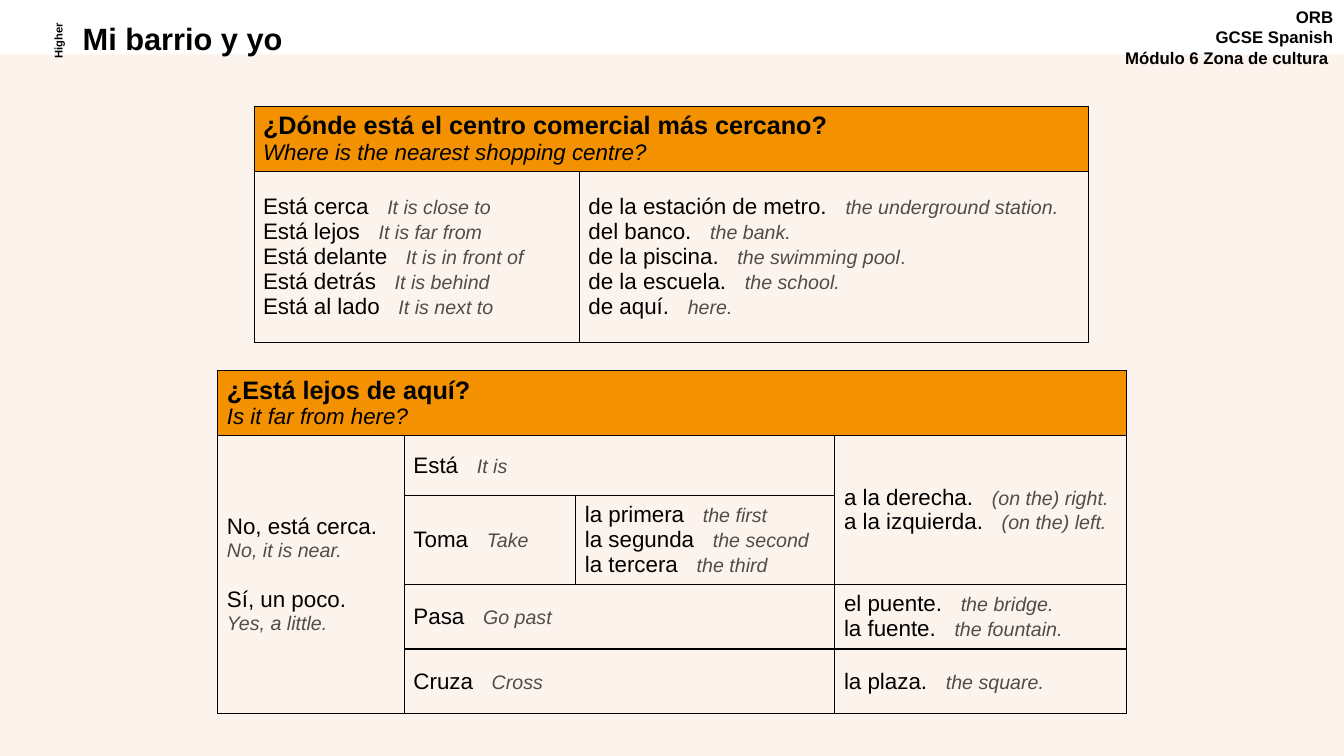
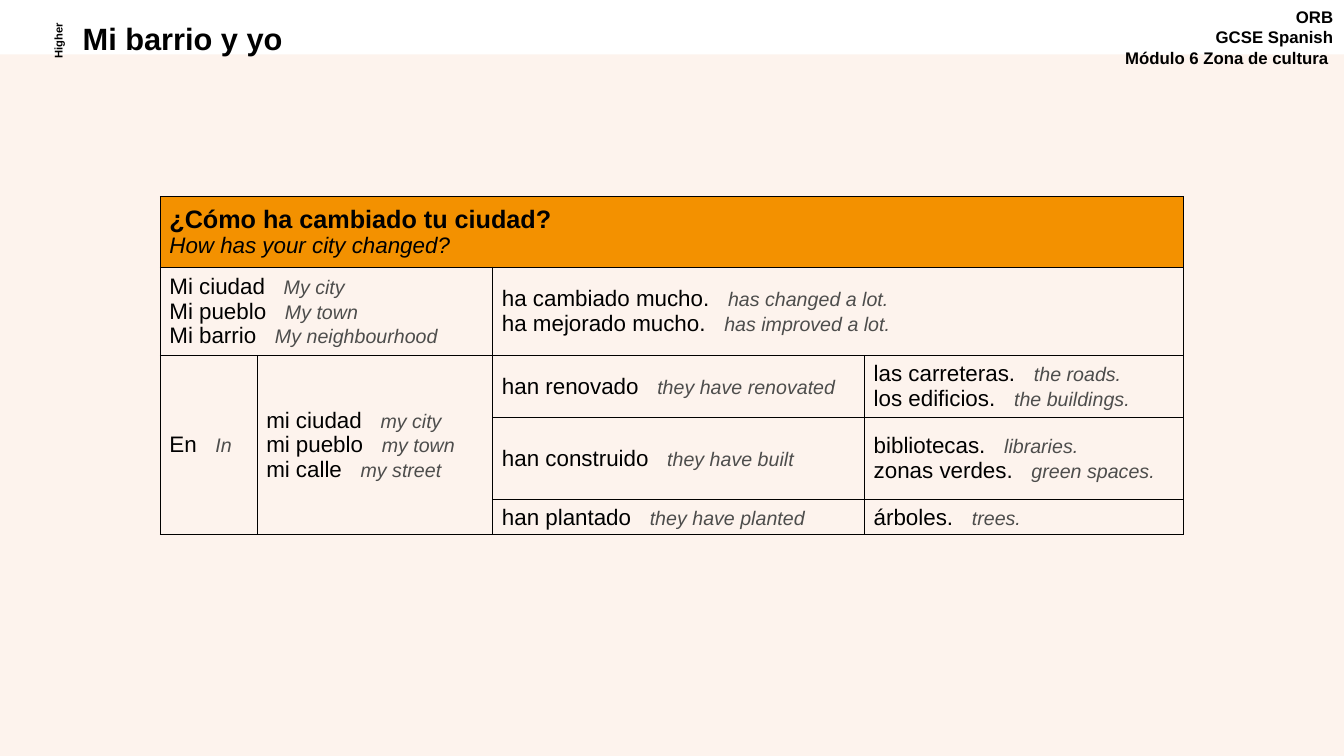
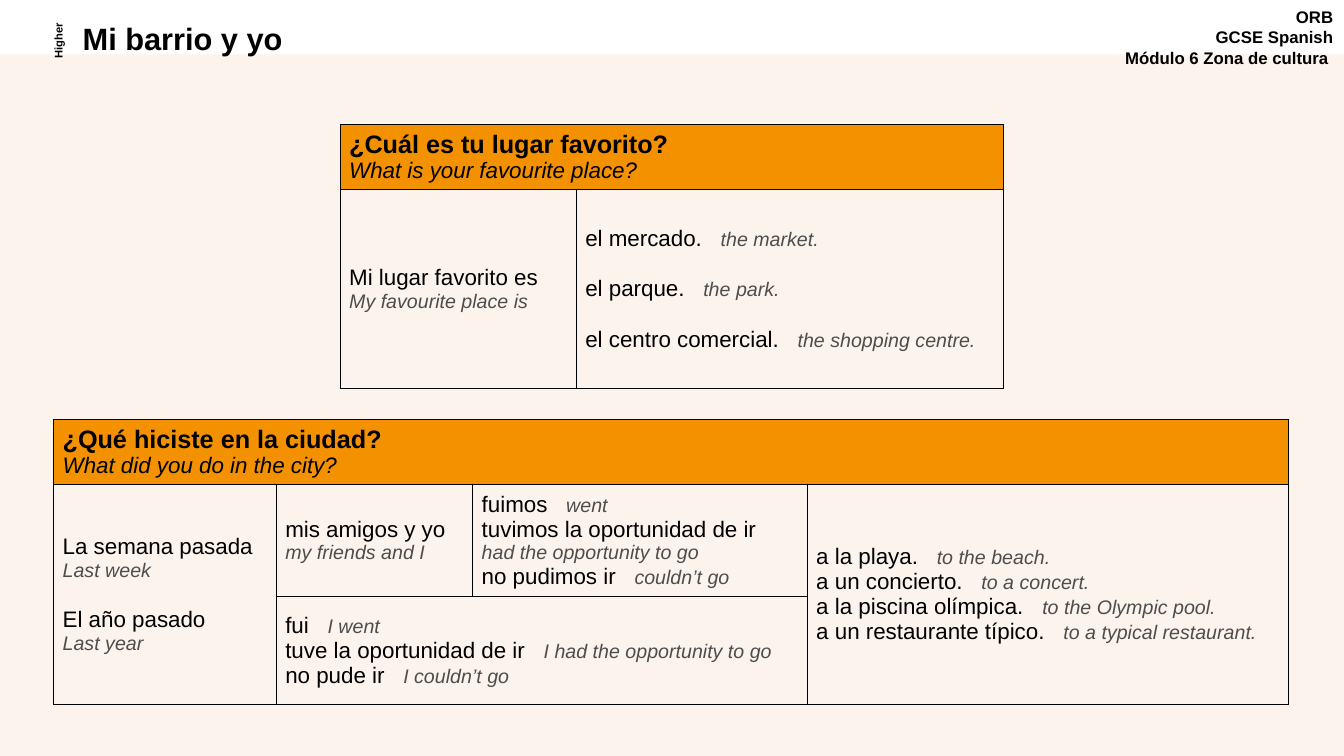
"""Build three Spanish vocabulary slides of sentence-builder tables."""
from dataclasses import dataclass
from itertools import product
from typing import NamedTuple

from lxml import etree
from pptx import Presentation
from pptx import util as u
from pptx.dml.color import RGBColor
from pptx.enum import shapes, text
from pptx.oxml.ns import qn
from pptx.slide import Slide
from pptx.table import _Cell

BLACK = RGBColor(0x00, 0x00, 0x00)
GREY = RGBColor(0x4D, 0x4D, 0x4C)
ORANGE = RGBColor(0xF3, 0x91, 0x00)
CREAM = RGBColor(0xFD, 0xF3, 0xED)
FONT = "Arial"
WIDTH, HEIGHT = 33.87, 19.05
BAND_TOP = 1.37
THIN, THICK = 0.75, 1.0
WORD_GAP = 8.9
LINE_GAP = 18.4


class Line(NamedTuple):
    """A Spanish phrase, its English meaning and the space above."""
    es: str
    en: str = ""
    tail: str = ""
    gap: float = 0


@dataclass
class Cell:
    """A table cell at a grid place, with its lines and span."""
    row: int
    col: int
    lines: list[Line]
    rows: int = 1
    cols: int = 1
    heavy: str = ""


@dataclass
class Grid:
    """A table with a question heading and body cells, in centimetres."""
    left: float
    top: float
    cols: list[float]
    rows: list[float]
    question: str
    meaning: str
    cells: list[Cell]


class Label(NamedTuple):
    """A small bold text repeated on every slide."""
    box: tuple[float, float, float, float]
    lines: list[str]
    size: float
    align: text.PP_ALIGN
    rotation: float = 0


TITLE = "Mi barrio y yo"
TITLE_BOX = (1.83, 0.48, 17.48, 1.09)
LABELS = [
    Label((27.91, 0.05, 5.94, 1.96), ["ORB", "GCSE Spanish", "Módulo 6 Zona de cultura "],
          12, text.PP_ALIGN.RIGHT),
    Label((0.46, 0.74, 1.98, 0.56), ["Higher"], 8, text.PP_ALIGN.CENTER, 270),
]

SLIDES = [
    [
        Grid(6.4, 2.67, [8.2, 12.83], [1.57, 4.32],
             "¿Dónde está el centro comercial más cercano?",
             "Where is the nearest shopping centre?", [
                 Cell(1, 0, [Line("Está cerca", "It is close to"),
                             Line("Está lejos", "It is far from"),
                             Line("Está delante", "It is in front of"),
                             Line("Está detrás", "It is behind"),
                             Line("Está al lado", "It is next to")]),
                 Cell(1, 1, [Line("de la estación de metro.", "the underground station."),
                             Line("del banco.", "the bank."),
                             Line("de la piscina.", "the swimming pool", tail="."),
                             Line("de la escuela.", "the school."),
                             Line("de aquí.", "here.")]),
             ]),
        Grid(5.49, 9.33, [4.7, 4.32, 6.53, 7.34], [1.56, 1.52, 2.21, 1.63, 1.63],
             "¿Está lejos de aquí?", "Is it far from here?", [
                 Cell(1, 0, [Line("No, está cerca."), Line("", "No, it is near."),
                             Line("Sí, un poco.", gap=LINE_GAP),
                             Line("", "Yes, a little.")], rows=4),
                 Cell(1, 1, [Line("Está", "It is")], cols=2),
                 Cell(1, 3, [Line("a la derecha.", "(on the) right."),
                             Line("a la izquierda.", "(on the) left.")], rows=2),
                 Cell(2, 1, [Line("Toma", "Take")]),
                 Cell(2, 2, [Line("la primera", "the first"),
                             Line("la segunda", "the second"),
                             Line("la tercera", "the third")]),
                 Cell(3, 1, [Line("Pasa", "Go past")], cols=2, heavy="lnB"),
                 Cell(3, 3, [Line("el puente.", "the bridge."),
                             Line("la fuente.", "the fountain.")], heavy="lnB"),
                 Cell(4, 1, [Line("Cruza", "Cross")], cols=2, heavy="lnT"),
                 Cell(4, 3, [Line("la plaza.", "the square.")], heavy="lnT"),
             ]),
    ],
    [
        Grid(4.04, 4.95, [2.44, 5.94, 9.37, 8.03], [1.78, 2.11, 1.47, 2.08, 0.86],
             "¿Cómo ha cambiado tu ciudad?", "How has your city changed?", [
                 Cell(1, 0, [Line("Mi ciudad", "My city"),
                             Line("Mi pueblo", "My town"),
                             Line("Mi barrio", "My neighbourhood")], cols=2),
                 Cell(1, 2, [Line("ha cambiado mucho.", "has changed a lot."),
                             Line("ha mejorado mucho.", "has improved a lot.")], cols=2),
                 Cell(2, 0, [Line("En", "In")], rows=3),
                 Cell(2, 1, [Line("mi ciudad", "my city"),
                             Line("mi pueblo", "my town"),
                             Line("mi calle", "my street")], rows=3),
                 Cell(2, 2, [Line("han renovado", "they have renovated")]),
                 Cell(2, 3, [Line("las carreteras.", "the roads."),
                             Line("los edificios.", "the buildings.")]),
                 Cell(3, 2, [Line("han construido", "they have built")]),
                 Cell(3, 3, [Line("bibliotecas.", "libraries."),
                             Line("zonas verdes.", "green spaces.")]),
                 Cell(4, 2, [Line("han plantado", "they have planted")]),
                 Cell(4, 3, [Line("árboles.", "trees.")]),
             ]),
    ],
    [
        Grid(8.57, 3.13, [5.95, 10.76], [1.56, 5.03],
             "¿Cuál es tu lugar favorito?", "What is your favourite place?", [
                 Cell(1, 0, [Line("Mi lugar favorito es"), Line("", "My favourite place is")]),
                 Cell(1, 1, [Line("el mercado.", "the market."),
                             Line("el parque.", "the park.", gap=LINE_GAP),
                             Line("el centro comercial.", "the shopping centre.",
                                  gap=LINE_GAP)]),
             ]),
        Grid(1.35, 10.57, [5.61, 4.95, 8.43, 12.14], [1.56, 2.72, 2.72],
             "¿Qué hiciste en la ciudad?", "What did you do in the city?", [
                 Cell(1, 0, [Line("La semana pasada"), Line("", "Last week"),
                             Line("El año pasado", gap=LINE_GAP),
                             Line("", "Last year")], rows=2),
                 Cell(1, 1, [Line("mis amigos y yo"), Line("", "my friends and I")]),
                 Cell(1, 2, [Line("fuimos", "went"),
                             Line("tuvimos la oportunidad de ir"),
                             Line("", "had the opportunity to go"),
                             Line("no pudimos ir", "couldn’t go")]),
                 Cell(1, 3, [Line("a la playa.", "to the beach."),
                             Line("a un concierto.", "to a concert."),
                             Line("a la piscina olímpica.", "to the Olympic pool."),
                             Line("a un restaurante típico.", "to a typical restaurant.")],
                      rows=2),
                 Cell(2, 1, [Line("fui", "I went"),
                             Line("tuve la oportunidad de ir", "I had the opportunity to go"),
                             Line("no pude ir", "I couldn’t go")], cols=2),
             ]),
    ],
]


def format_run(r, size: float, color: RGBColor = BLACK, bold: bool = False,
               italic: bool = False) -> None:
    """Give a run its font."""
    f = r.font
    f.name, f.size, f.bold, f.italic = FONT, u.Pt(size), bold, italic
    f.color.rgb = color


def add_run(p, words: str, size: float, color: RGBColor = BLACK, italic: bool = False):
    """Append a formatted run to a paragraph."""
    r = p.add_run()
    r.text = words
    format_run(r, size, color, italic=italic)
    return r


def write_line(p, line: Line) -> None:
    """Write a phrase and its meaning, set apart by one widened space."""
    if line.gap:
        p.space_before = u.Pt(line.gap)
    if line.es:
        add_run(p, line.es, 16)
    if line.es and line.en:
        space = add_run(p, " ", 16)
        space.font._element.set("spc", str(round(WORD_GAP * 100)))
    if line.en:
        add_run(p, line.en, 14, GREY, italic=True)
    if line.tail:
        add_run(p, line.tail, 14, GREY)


def style_cell(cell: _Cell, heavy: str, fill: RGBColor | None) -> None:
    """Set the borders, fill, margins and anchor of a cell."""
    tcPr = cell._tc.get_or_add_tcPr()
    for edge in ("lnL", "lnR", "lnT", "lnB"):
        weight = THICK if edge == heavy else THIN
        ln = etree.SubElement(tcPr, qn(f"a:{edge}"), w=str(u.Pt(weight)))
        solid = etree.SubElement(ln, qn("a:solidFill"))
        etree.SubElement(solid, qn("a:srgbClr"), val=str(BLACK))
    if fill is None:
        cell.fill.background()
    else:
        cell.fill.solid()
        cell.fill.fore_color.rgb = fill
    cell.margin_left = cell.margin_right = u.Cm(0.23)
    cell.margin_top = cell.margin_bottom = u.Cm(0.1)
    cell.vertical_anchor = text.MSO_ANCHOR.MIDDLE


def add_grid(s: Slide, grid: Grid) -> None:
    """Draw a sentence-builder table."""
    frame = s.shapes.add_table(len(grid.rows), len(grid.cols), u.Cm(grid.left), u.Cm(grid.top),
                               u.Cm(sum(grid.cols)), u.Cm(sum(grid.rows)))
    table = frame.table
    table.first_row = table.horz_banding = False
    for column, width in zip(table.columns, grid.cols):
        column.width = u.Cm(width)
    for row, height in zip(table.rows, grid.rows):
        row.height = u.Cm(height)

    heading = Cell(0, 0, [], cols=len(grid.cols))
    for item in [heading, *grid.cells]:
        fill = ORANGE if item is heading else None
        for i, j in product(range(item.rows), range(item.cols)):
            style_cell(table.cell(item.row + i, item.col + j), item.heavy, fill)
        cell = table.cell(item.row, item.col)
        if item.rows * item.cols > 1:
            cell.merge(table.cell(item.row + item.rows - 1, item.col + item.cols - 1))
        tf = cell.text_frame
        for i, line in enumerate(item.lines):
            write_line(tf.add_paragraph() if i else tf.paragraphs[0], line)

    tf = table.cell(0, 0).text_frame
    tf.text = f"{grid.question}\n{grid.meaning}"
    question, meaning = tf.paragraphs
    format_run(question.runs[0], 18, bold=True)
    format_run(meaning.runs[0], 16, italic=True)


def add_label(s: Slide, label: Label) -> None:
    """Draw a small bold label."""
    sp = s.shapes.add_textbox(*map(u.Cm, label.box))
    sp.rotation = label.rotation
    tf = sp.text_frame
    tf.word_wrap = True
    tf.text = "\n".join(label.lines)
    for p in tf.paragraphs:
        p.alignment = label.align
        format_run(p.runs[0], label.size, bold=True)


def add_base(s: Slide) -> None:
    """Draw the background panel, title and labels of a slide."""
    panel = s.shapes.add_shape(shapes.MSO_SHAPE.RECTANGLE, 0, u.Cm(BAND_TOP), u.Cm(WIDTH),
                               u.Cm(HEIGHT - BAND_TOP))
    panel.shadow.inherit = False
    panel.fill.solid()
    panel.fill.fore_color.rgb = CREAM
    panel.line.fill.background()

    title = s.shapes.title
    panel._element.addnext(title._element)
    title.left, title.top, title.width, title.height = map(u.Cm, TITLE_BOX)
    tf = title.text_frame
    tf.text = TITLE
    tf.auto_size = text.MSO_AUTO_SIZE.NONE
    tf.vertical_anchor = text.MSO_ANCHOR.TOP
    p = tf.paragraphs[0]
    p.alignment = text.PP_ALIGN.LEFT
    p.line_spacing = 0.9
    format_run(p.runs[0], 22, bold=True)
    for label in LABELS:
        add_label(s, label)


def main() -> None:
    """Build and save the presentation."""
    prs = Presentation()
    prs.slide_width, prs.slide_height = u.Cm(WIDTH), u.Cm(HEIGHT)
    for grids in SLIDES:
        s = prs.slides.add_slide(prs.slide_layouts[5])
        add_base(s)
        for grid in grids:
            add_grid(s, grid)
    prs.save("out.pptx")


if __name__ == "__main__":
    main()
